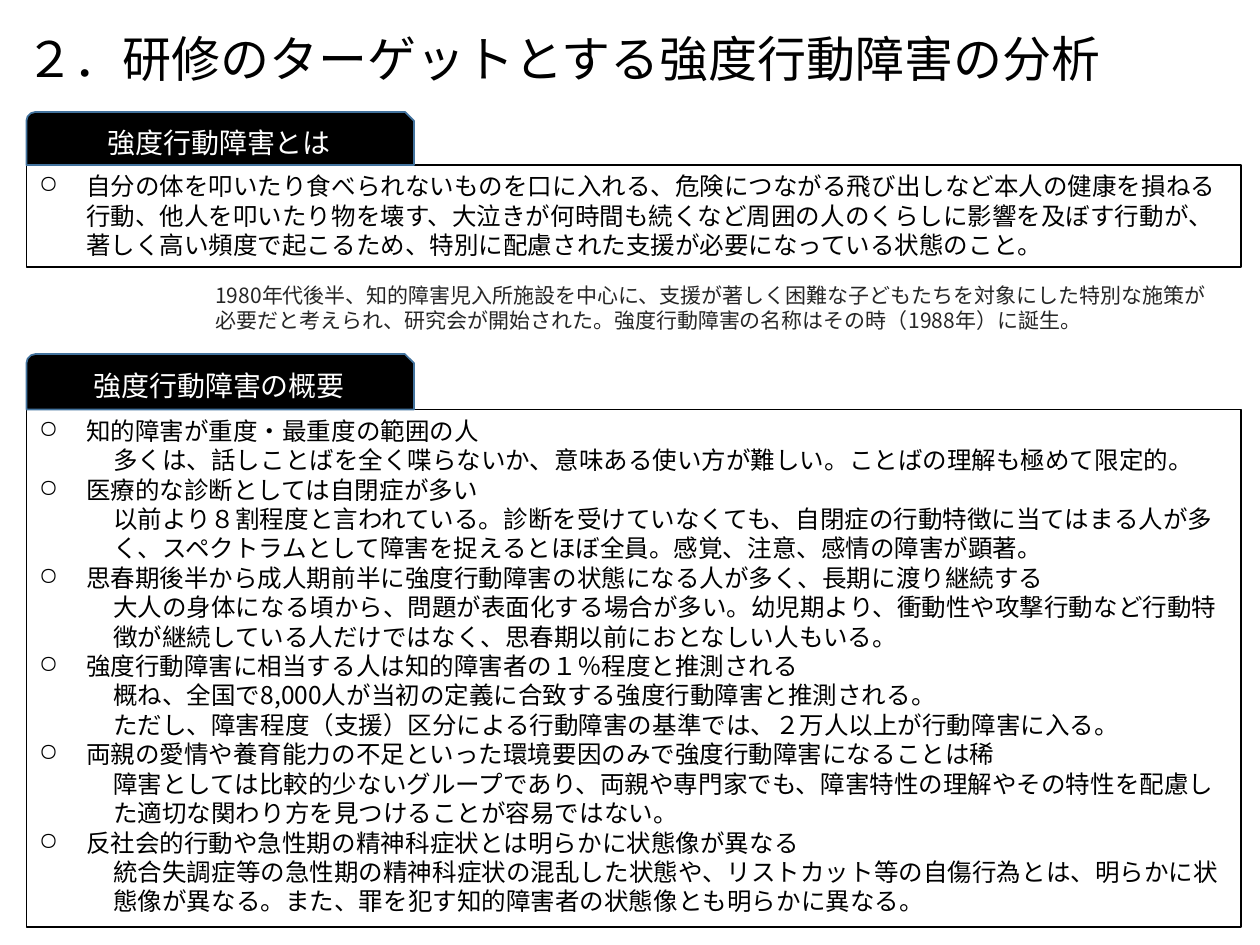
from lxml import etree
from pptx import Presentation
from pptx.dml.color import RGBColor
from pptx.enum import shapes, text
from pptx.oxml import ns
from pptx.util import Pt

FONT = "Noto Sans CJK JP"
COLORS = {"ink": "000000", "paper": "FFFFFF", "note": "262626", "tab_edge": "43739E"}
LEFT, BOX_WIDTH, TAB_WIDTH = 15.1, 694, 221.5
HEADING_INDENT, DETAIL_INDENT = 27, 42.5

DEFINITION = [
    ("自分の体を叩いたり食べられないものを口に入れる、危険につながる飛び出しなど本人の健康を損ねる"
     "行動、他人を叩いたり物を壊す、大泣きが何時間も続くなど周囲の人のくらしに影響を及ぼす行動が、"
     "著しく高い頻度で起こるため、特別に配慮された支援が必要になっている状態のこと。", []),
]
HISTORY = ("1980年代後半、知的障害児入所施設を中心に、支援が著しく困難な子どもたちを対象にした特別な施策が"
           "必要だと考えられ、研究会が開始された。強度行動障害の名称はその時（1988年）に誕生。")
OVERVIEW = [
    ("知的障害が重度・最重度の範囲の人",
     ["多くは、話しことばを全く喋らないか、意味ある使い方が難しい。ことばの理解も極めて限定的。"]),
    ("医療的な診断としては自閉症が多い",
     ["以前より８割程度と言われている。診断を受けていなくても、自閉症の行動特徴に当てはまる人が多"
      "く、スペクトラムとして障害を捉えるとほぼ全員。感覚、注意、感情の障害が顕著。"]),
    ("思春期後半から成人期前半に強度行動障害の状態になる人が多く、長期に渡り継続する",
     ["大人の身体になる頃から、問題が表面化する場合が多い。幼児期より、衝動性や攻撃行動など行動特"
      "徴が継続している人だけではなく、思春期以前におとなしい人もいる。"]),
    ("強度行動障害に相当する人は知的障害者の１％程度と推測される",
     ["概ね、全国で8,000人が当初の定義に合致する強度行動障害と推測される。",
      "ただし、障害程度（支援）区分による行動障害の基準では、２万人以上が行動障害に入る。"]),
    ("両親の愛情や養育能力の不足といった環境要因のみで強度行動障害になることは稀",
     ["障害としては比較的少ないグループであり、両親や専門家でも、障害特性の理解やその特性を配慮し"
      "た適切な関わり方を見つけることが容易ではない。"]),
    ("反社会的行動や急性期の精神科症状とは明らかに状態像が異なる",
     ["統合失調症等の急性期の精神科症状の混乱した状態や、リストカット等の自傷行為とは、明らかに状"
      "態像が異なる。また、罪を犯す知的障害者の状態像とも明らかに異なる。"]),
]


def rgb(name):
    return RGBColor.from_string(COLORS[name])


def write(paragraph, words, size, color, **layout):
    run = paragraph.add_run()
    run.text = words
    run.font.name = FONT
    run.font.size = Pt(size)
    run.font.color.rgb = rgb(color)
    east_asian = etree.SubElement(run.font._element, ns.qn("a:ea"))
    east_asian.set("typeface", FONT)
    for key, value in {"alignment": text.PP_ALIGN.LEFT, **layout}.items():
        setattr(paragraph, key, value)


def indent(paragraph, margin, bullet=None):
    """Set the left margin; a bullet hangs back to the box edge."""
    properties = paragraph._p.get_or_add_pPr()
    properties.set("marL", str(Pt(margin)))
    properties.set("indent", str(Pt(-margin if bullet else 0)))
    if bullet:
        etree.SubElement(properties, ns.qn("a:buChar")).set("char", bullet)
    else:
        etree.SubElement(properties, ns.qn("a:buNone"))


def format_frame(frame, **changes):
    settings = {"word_wrap": True, "vertical_anchor": text.MSO_ANCHOR.TOP, **changes}
    for key, value in settings.items():
        setattr(frame, key, value)


def add_panel(slide, preset, box, edge, fill=None):
    panel = slide.shapes.add_shape(preset, *map(Pt, box))
    panel.shadow.inherit = False
    panel.line.color.rgb = rgb(edge)
    panel.line.width = Pt(1)
    if fill:
        panel.fill.solid()
        panel.fill.fore_color.rgb = rgb(fill)
    else:
        panel.fill.background()
    return panel.text_frame


def add_plain_text(slide, box, words, size, color, anchor, **layout):
    frame = slide.shapes.add_textbox(*map(Pt, box)).text_frame
    format_frame(frame, vertical_anchor=anchor)
    write(frame.paragraphs[0], words, size, color, **layout)


def add_section(slide, box, tab_height, label, items):
    """Place a tab at the top left of the box and the bulleted panel below it."""
    left, top, width, height = box
    panel_box = (left, top + tab_height, width, height - tab_height)
    body = add_panel(slide, shapes.MSO_SHAPE.RECTANGLE, panel_box, "ink")
    format_frame(body, auto_size=text.MSO_AUTO_SIZE.SHAPE_TO_FIT_TEXT)
    lines = [(words, level) for heading, details in items
             for words, level in [(heading, 0)] + [(detail, 1) for detail in details]]
    for number, (words, level) in enumerate(lines):
        paragraph = body.add_paragraph() if number else body.paragraphs[0]
        write(paragraph, words, 14, "ink")
        if level:
            indent(paragraph, DETAIL_INDENT)
        else:
            indent(paragraph, HEADING_INDENT, "○")

    tab = add_panel(slide, shapes.MSO_SHAPE.SNIP_ROUND_RECTANGLE,
                    (left, top, TAB_WIDTH, tab_height), "tab_edge", "ink")
    format_frame(tab, vertical_anchor=text.MSO_ANCHOR.MIDDLE)
    write(tab.paragraphs[0], label, 16, "paper",
          alignment=text.PP_ALIGN.CENTER, line_spacing=Pt(22))


def main():
    deck = Presentation()
    deck.slide_width, deck.slide_height = Pt(720), Pt(540)
    slide = deck.slides.add_slide(deck.slide_layouts[6])
    add_plain_text(slide, (7.2, 5.8, 697, 59), "２．研修のターゲットとする強度行動障害の分析",
                   28, "ink", text.MSO_ANCHOR.MIDDLE, line_spacing=0.9)
    add_section(slide, (LEFT, 64, BOX_WIDTH, 88.6), 30.3, "強度行動障害とは", DEFINITION)
    add_plain_text(slide, (116, 157.7, 584.6, 36.7), HISTORY,
                   12, "note", text.MSO_ANCHOR.TOP)
    add_section(slide, (LEFT, 202.3, BOX_WIDTH, 327.6), 31.7, "強度行動障害の概要", OVERVIEW)
    deck.save("out.pptx")


if __name__ == "__main__":
    main()
